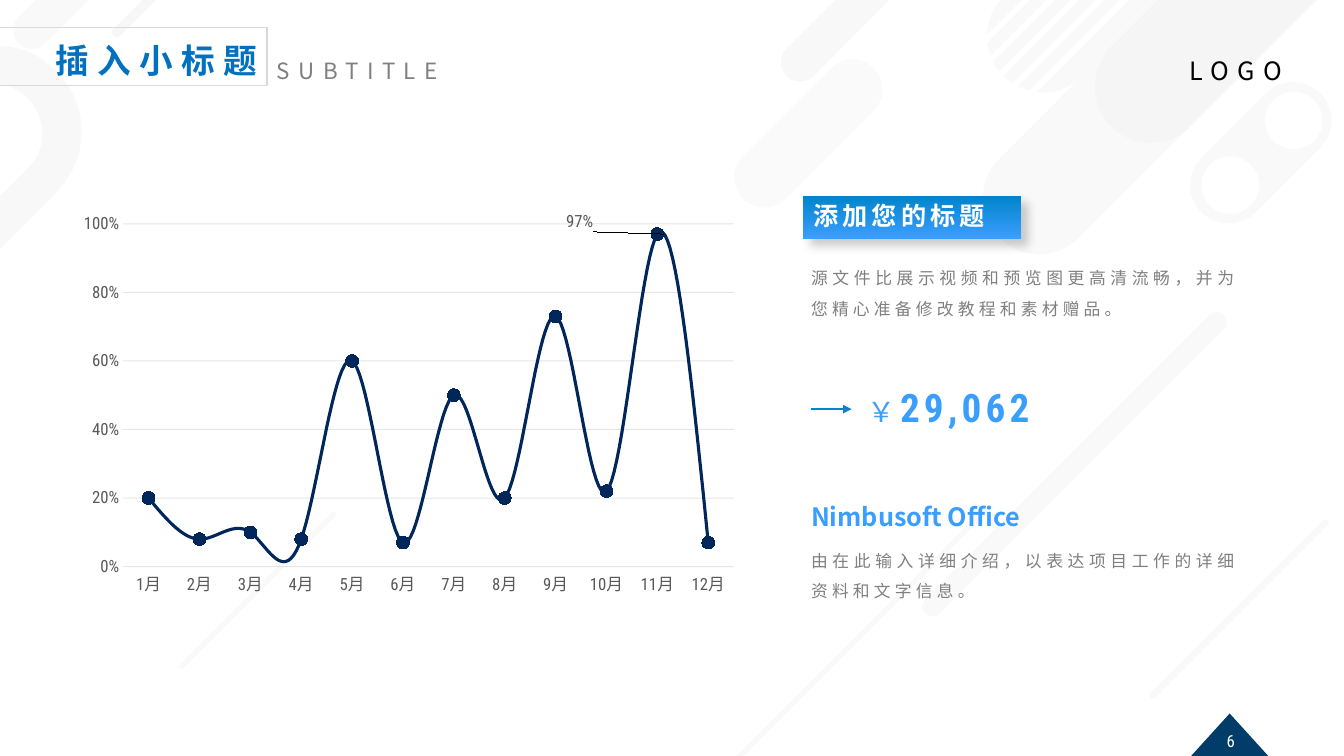
from lxml import etree
from pptx import Presentation, util as u
from pptx.chart.data import CategoryChartData
from pptx.dml.color import RGBColor
from pptx.enum import chart as ch, shapes, text as t
from pptx.oxml import parse_xml
from pptx.oxml.ns import qn

SANS, SANS_JP, CONDENSED = "Noto Sans CJK SC", "Noto Sans CJK JP", "Roboto Condensed"
BLUE, SKY, NAVY, PALE = "0184CB", "3A9EFE", "00265A", "F2F2F2"
GREY, DARK_GREY, WHITE = "808080", "595959", "FFFFFF"
CHART_NS = "http://schemas.openxmlformats.org/drawingml/2006/chart"

# Boxes are left, top, width, height in cm; a run is text, font, size, colour, bold, tracking.
TITLE = ("插入小标题", SANS, 24, "0070C0", True, 6)
TITLE_BOX = (-2.87, 0.69, 9.6, 1.47)
TAG = ("添加您的标题", SANS, 18, WHITE, True, 3)
TAG_BOX = (20.24, 4.93, 5.49, 1.09)
LINES = [
    ((6.73, 1.32, 4.78, 0.94), [("SUBTITLE", SANS_JP, 16, GREY, False, 6)]),
    ((29.72, 1.27, 3.2, 1.02), [("LOGO", SANS, 18, "000000", False, 6)]),
    ((21.62, 9.53, 4.75, 1.45), [("￥", CONDENSED, 20, (SKY, "00A0E6"), False, 3),
                                 ("29,062", CONDENSED, 28, (SKY, "00A0E6"), True, 3)]),
    ((20.19, 12.52, 5.99, 1.02), [("Nimbusoft Office", SANS, 18, (SKY, BLUE), True, 0)]),
]
PARAGRAPHS = [
    ((20.19, 6.38, 11.28, 1.8), "源文件比展示视频和预览图更高清流畅，并为您精心准备修改教程和素材赠品。"),
    ((20.19, 13.49, 11.28, 1.7), "由在此输入详细介绍，以表达项目工作的详细资料和文字信息。"),
]
PAGE_BOX, PAGE = (29.92, 18.31, 1.45, 0.71), ("6", CONDENSED, 12, WHITE, False, 0)
PAGE_CORNER = (30, 17.98, 1.98, 1.09)
ARROW = (20.45, 10.31, 21.46, 10.31)

CHART_BOX = (2.11, 4.93, 17.48, 10.31)
PLOT = {"x": 0.054, "y": 0.069, "w": 0.883, "h": 0.838}
MONTHS = [f"{month}月" for month in range(1, 13)]
RATES = [0.2, 0.08, 0.1, 0.08, 0.6, 0.07, 0.5, 0.2, 0.73, 0.22, 0.97, 0.07]
LABEL_SHIFT = {"x": -0.147, "y": -0.03}

# Diagonal bars: box and opacity in percent.
BIG_BARS = [
    (29.29, -7.32, 2.82, 15.6, 46), (32.11, -10.13, 2.82, 15.6, 50),
    (29.39, -11.4, 2.82, 15.6, 45), (30.81, 1.73, 1.93, 4.24, 40),
]
HOLES = [(31.88, 2.31, 1.45, 1.45), (30.28, 3.94, 1.45, 1.45)]
STRIPES = [(24.61 + 0.62 * i, -6.07, 0.15, 14.48, 100) for i in range(5)]
THIN_BARS = [
    (6.43, 12.09, 0.13, 5.56, 45), (21.06, 11.28, 0.13, 10.59, 40),
    (26.82, 6.38, 0.51, 10.64, 40), (19.61, 1.04, 1.52, 4.65, 37),
    (20.98, -2.06, 0.97, 4.65, 50), (31.14, 12.19, 0.18, 6.32, 40),
    (3.99, -2.11, 0.23, 3.53, 60), (1.24, -1.9, 0.94, 3.51, 40),
]
# Each step holds one point (straight) or three (Bézier).
HOOK = [
    [(0, 1.17)], [(0.2, 1.17)], [(0.51, 1.22), (0.81, 1.32), (1.07, 1.5)],
    [(1.42, 1.78)], [(1.7, 2.13)], [(2.26, 2.97), (2.16, 4.11), (1.42, 4.85)],
    [(0, 6.27)], [(0, 4.95)], [(0.71, 4.24)],
    [(1.19, 3.76), (1.19, 2.97), (0.71, 2.49)],
    [(0.53, 2.31), (0.3, 2.18), (0.08, 2.13)], [(0, 2.13)],
]


def cm(values):
    return [u.Cm(v) for v in values]


def paint(fill, colour, opacity=100):
    """Fill with a hex colour, or bottom to top with a pair of them."""
    if isinstance(colour, tuple):
        fill.gradient()
        fill.gradient_angle = 90
        for stop, part, place in zip(fill.gradient_stops, colour, (0.01, 0.99)):
            stop.color.rgb = RGBColor.from_string(part)
            stop.position = place
        return
    fill.solid()
    fill.fore_color.rgb = RGBColor.from_string(colour)
    if opacity < 100:
        rgb = next(fill._xPr.iter(qn("a:srgbClr")))
        etree.SubElement(rgb, qn("a:alpha")).set("val", str(opacity * 1000))


def add_shape(slide, kind, box, colour, opacity=100):
    shape = slide.shapes.add_shape(kind, *cm(box))
    shape.shadow.inherit = False
    shape.line.fill.background()
    paint(shape.fill, colour, opacity)
    return shape


def add_bars(slide, bars, colour):
    for *box, opacity in bars:
        bar = add_shape(slide, shapes.MSO_SHAPE.ROUNDED_RECTANGLE, box, colour, opacity)
        bar.adjustments[0] = 0.5
        bar.rotation = 45


def add_hook(slide):
    points = []
    for step in HOOK:
        if len(step) == 1:
            points += step
            continue
        curve = [points[-1], *step]
        for k in range(1, 13):
            s = k / 12
            weights = ((1 - s) ** 3, 3 * s * (1 - s) ** 2, 3 * s * s * (1 - s), s ** 3)
            points.append(tuple(sum(w * p[axis] for w, p in zip(weights, curve))
                                for axis in (0, 1)))
    builder = slide.shapes.build_freeform(*cm(points[0]), scale=1.0)
    builder.add_line_segments([cm(p) for p in points[1:]])
    hook = builder.convert_to_shape()
    hook.shadow.inherit = False
    hook.line.fill.background()
    paint(hook.fill, PALE, 50)


def write(shape, runs, align=t.PP_ALIGN.LEFT, anchor=t.MSO_ANCHOR.TOP, wrap=False, spacing=None):
    frame = shape.text_frame
    frame.word_wrap, frame.vertical_anchor = wrap, anchor
    frame.auto_size = t.MSO_AUTO_SIZE.NONE
    paragraph = frame.paragraphs[0]
    paragraph.alignment, paragraph.line_spacing = align, spacing
    for words, font, size, colour, bold, tracking in runs:
        run = paragraph.add_run()
        run.text = words
        run.font.size, run.font.bold, run.font.name = u.Pt(size), bold, font
        paint(run.font.fill, colour)
        props = run.font._element
        props.set("spc", str(tracking * 100))
        east_asian = etree.Element(qn("a:ea"), typeface=font)
        props.find(qn("a:latin")).addnext(east_asian)


def manual_layout(values, inner=False):
    target = '<c:layoutTarget val="inner"/><c:xMode val="edge"/><c:yMode val="edge"/>' if inner else ""
    parts = "".join(f'<c:{key} val="{value}"/>' for key, value in values.items())
    return parse_xml(f'<c:layout xmlns:c="{CHART_NS}"><c:manualLayout>{target}{parts}'
                     "</c:manualLayout></c:layout>")


def style_font(font, size=12):
    font.size, font.name = u.Pt(size), CONDENSED
    paint(font.fill, DARK_GREY)


def add_rates_chart(slide):
    data = CategoryChartData(number_format="0%")
    data.categories = MONTHS
    data.add_series("Series 1", RATES)
    chart = slide.shapes.add_chart(ch.XL_CHART_TYPE.LINE_MARKERS, *cm(CHART_BOX), data).chart
    chart.has_legend = chart.has_title = False
    style_font(chart.font, 10)
    for axis in (chart.category_axis, chart.value_axis):
        axis.major_tick_mark = axis.minor_tick_mark = ch.XL_TICK_MARK.NONE
        axis.format.line.fill.background()
        style_font(axis.tick_labels.font)
    rate_axis = chart.value_axis
    rate_axis.minimum_scale, rate_axis.maximum_scale, rate_axis.major_unit = 0, 1, 0.2
    rate_axis.tick_labels.number_format = "0%"
    rate_axis.tick_labels.number_format_is_linked = False
    grid = rate_axis.major_gridlines.format.line
    grid.width = u.Pt(0.75)
    paint(grid.fill, GREY, 20)

    plot = chart.plots[0]
    plot.vary_by_categories = False
    rates = plot.series[0]
    rates.smooth = True
    rates.format.line.width = u.Pt(2.25)
    rates.marker.style, rates.marker.size = ch.XL_MARKER_STYLE.CIRCLE, 9
    for fill in (rates.format.line.fill, rates.marker.format.fill, rates.marker.format.line.fill):
        paint(fill, NAVY)

    rates.data_labels.show_value = False
    peak = rates.points[RATES.index(max(RATES))].data_label
    peak.position = ch.XL_LABEL_POSITION.RIGHT
    style_font(peak.font)
    labels = rates.data_labels._element
    labels.find(qn("c:dLbl")).find(qn("c:idx")).addnext(manual_layout(LABEL_SHIFT))
    labels.append(parse_xml(
        f'<c:extLst xmlns:c="{CHART_NS}"><c:ext uri="{{CE6537A1-D6FC-4f65-9D91-7224C49458BB}}" '
        'xmlns:c15="http://schemas.microsoft.com/office/drawing/2012/chart">'
        '<c15:showLeaderLines val="1"/></c:ext></c:extLst>'))
    area = chart._chartSpace.chart.plotArea
    for layout in area.findall(qn("c:layout")):
        area.remove(layout)
    area.insert(0, manual_layout(PLOT, inner=True))


def add_arrow(slide):
    arrow = slide.shapes.add_connector(shapes.MSO_CONNECTOR.STRAIGHT, *cm(ARROW))
    arrow.line.width = u.Pt(1.75)
    paint(arrow.line.fill, BLUE)
    etree.SubElement(arrow.line._get_or_add_ln(), qn("a:tailEnd")).set("type", "triangle")
    etree.SubElement(arrow._element.spPr, qn("a:effectLst"))


def add_tag(slide):
    tag = add_shape(slide, shapes.MSO_SHAPE.RECTANGLE, TAG_BOX, (SKY, BLUE))
    shadow = etree.SubElement(tag._element.spPr.find(qn("a:effectLst")), qn("a:outerShdw"),
                              blurRad=str(u.Pt(7)), dist=str(u.Pt(7)), dir="2700000", algn="tl")
    black = etree.SubElement(shadow, qn("a:srgbClr"), val="000000")
    etree.SubElement(black, qn("a:alpha"), val="20000")
    write(tag, [TAG], wrap=True)


def main():
    deck = Presentation()
    deck.slide_width, deck.slide_height = cm((33.87, 19.05))
    slide = deck.slides.add_slide(deck.slide_layouts[5])
    add_shape(slide, shapes.MSO_SHAPE.ISOSCELES_TRIANGLE, PAGE_CORNER, "013D68")
    write(slide.shapes.add_textbox(*cm(PAGE_BOX)), [PAGE], t.PP_ALIGN.RIGHT, t.MSO_ANCHOR.MIDDLE, True)
    add_hook(slide)
    add_bars(slide, BIG_BARS, PALE)
    for hole in HOLES:
        add_shape(slide, shapes.MSO_SHAPE.OVAL, hole, WHITE)
    add_bars(slide, STRIPES, WHITE)
    add_bars(slide, THIN_BARS, PALE)

    title = slide.shapes.title
    title.left, title.top, title.width, title.height = cm(TITLE_BOX)
    title.line.width = u.Pt(0.75)
    paint(title.line.fill, "D9D9D9")
    write(title, [TITLE], t.PP_ALIGN.RIGHT, t.MSO_ANCHOR.BOTTOM, True)
    slide.shapes._spTree.append(title._element)  # in front of the bars

    for box, runs in LINES:
        write(slide.shapes.add_textbox(*cm(box)), runs)
    add_rates_chart(slide)
    add_arrow(slide)
    add_tag(slide)
    for box, words in PARAGRAPHS:
        write(slide.shapes.add_textbox(*cm(box)), [(words, SANS, 12, GREY, False, 3)],
              t.PP_ALIGN.JUSTIFY, wrap=True, spacing=1.5)
    deck.save("out.pptx")


if __name__ == "__main__":
    main()
